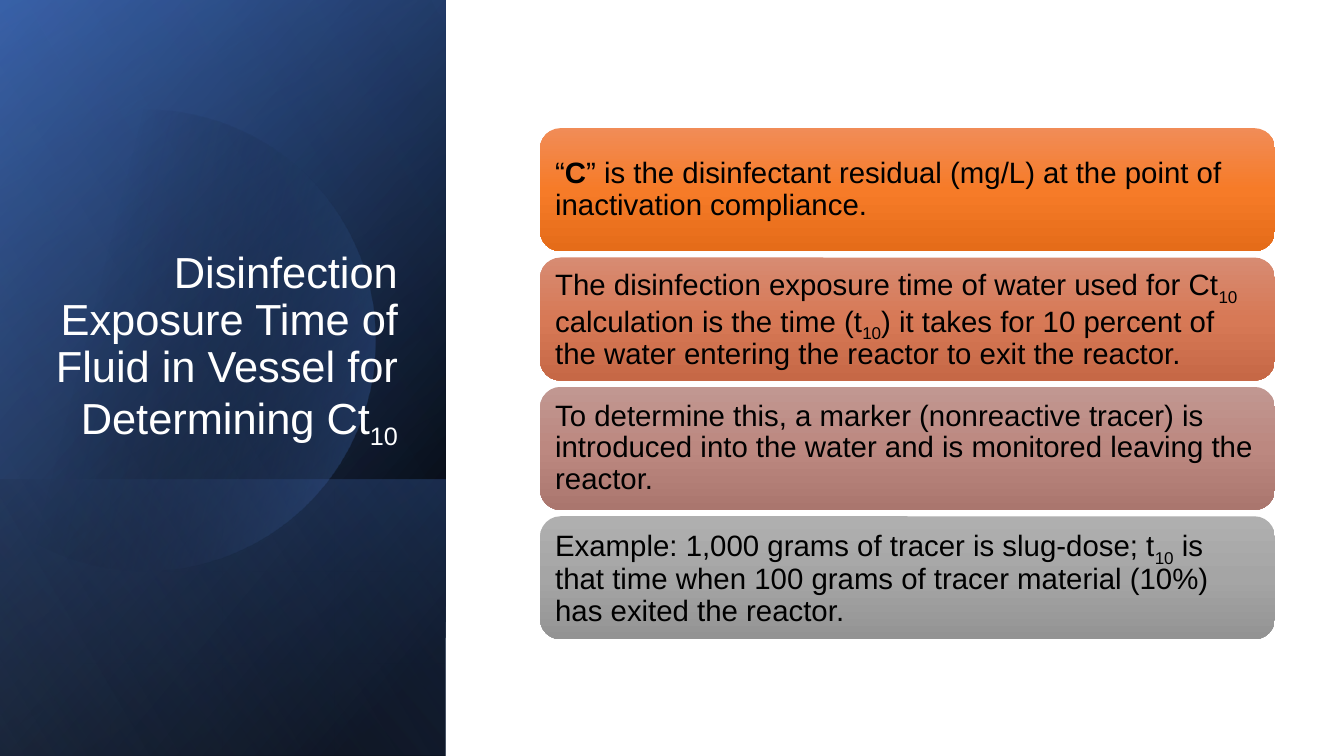
import math
from dataclasses import dataclass

import lxml.etree
import pptx
import pptx.dml.color
import pptx.enum.shapes
import pptx.enum.text
import pptx.oxml.ns
import pptx.util
from pptx.util import Cm

FONT = "Arial"
PANEL_WIDTH = 11.23
CARD_LEFT, CARD_TOP, CARD_WIDTH, CARD_HEIGHT, CARD_PITCH = 13.61, 3.23, 18.52, 3.1, 3.26


@dataclass
class Stop:
    position: int
    color: str
    opacity: int = 100


@dataclass
class Panel:
    top: float
    height: float
    angle: int
    stops: list[Stop]


@dataclass
class Piece:
    text: str
    bold: bool = False
    subscript: bool = False


@dataclass
class Card:
    colors: tuple[str, str, str]
    pieces: list[Piece]


TEN = Piece("10", subscript=True)
TITLE = [Piece("Disinfection Exposure Time of Fluid in Vessel for Determining Ct"), TEN]
BASE_PANELS = [
    Panel(0, 19.05, 50, [Stop(8, "000000"), Stop(100, "2F5597")]),
    Panel(0, 19.05, 30, [Stop(0, "000000", 0), Stop(99, "4472C4", 46)]),
    Panel(12.09, 6.96, 130, [Stop(2, "4472C4", 29), Stop(100, "000000", 30)]),
]
SHEEN_PANEL = Panel(0, 19.05, 120, [Stop(0, "000000", 0), Stop(99, "8FAADC", 11)])
CARDS = [
    Card(("F18C57", "F67B28", "E56C19"), [
        Piece("“"), Piece("C", bold=True),
        Piece("” is the disinfectant residual (mg/L) at the point of inactivation compliance."),
    ]),
    Card(("D78B72", "D77956", "C66846"), [
        Piece("The disinfection exposure time of water used for Ct"), TEN,
        Piece(" calculation is the time (t"), TEN,
        Piece(") it takes for 10 percent of the water entering the reactor to exit the reactor."),
    ]),
    Card(("C19791", "BC8880", "AA766E"), [
        Piece("To determine this, a marker (nonreactive tracer) is introduced into the water "
              "and is monitored leaving the reactor."),
    ]),
    Card(("AFAFAF", "A5A5A5", "939393"), [
        Piece("Example: 1,000 grams of tracer is slug-dose; t"), TEN,
        Piece(" is that time when 100 grams of tracer material (10%) has exited the reactor."),
    ]),
]


def rgb(color: str) -> pptx.dml.color.RGBColor:
    return pptx.dml.color.RGBColor.from_string(color)


def paint_gradient(shape, angle: float, stops: list[Stop]) -> None:
    """Fill without outline; the angle runs clockwise, in degrees."""
    qn = pptx.oxml.ns.qn
    shape.shadow.inherit = False
    shape.line.fill.background()
    shape.fill.gradient()
    shape.fill.gradient_angle = -angle % 360
    stop_list = shape.element.spPr.find(qn("a:gradFill")).find(qn("a:gsLst"))
    for old_stop in list(stop_list):
        stop_list.remove(old_stop)
    for stop in stops:
        node = lxml.etree.SubElement(stop_list, qn("a:gs"), pos=str(stop.position * 1000))
        color = lxml.etree.SubElement(node, qn("a:srgbClr"), val=stop.color)
        if stop.opacity < 100:
            lxml.etree.SubElement(color, qn("a:alpha"), val=str(stop.opacity * 1000))


def write_pieces(text_frame, pieces: list[Piece], size: float, color: str, alignment) -> None:
    text_frame.word_wrap = True
    paragraph = text_frame.paragraphs[0]
    paragraph.alignment = alignment
    paragraph.line_spacing = 0.9
    for piece in pieces:
        run = paragraph.add_run()
        run.text = piece.text
        run.font.name = FONT
        run.font.size = pptx.util.Pt(size)
        run.font.bold = piece.bold
        run.font.color.rgb = rgb(color)
        if piece.subscript:
            run.font._element.set("baseline", "-25000")


def add_panel(slide, panel: Panel) -> None:
    """Draw a mirrored rectangle turned by 90 degrees, so its gradient turns too."""
    shift = (PANEL_WIDTH - panel.height) / 2
    shape = slide.shapes.add_shape(
        pptx.enum.shapes.MSO_SHAPE.RECTANGLE,
        Cm(shift), Cm(panel.top - shift), Cm(panel.height), Cm(PANEL_WIDTH))
    shape.rotation = 90
    shape.element.spPr.xfrm.set("flipH", "1")
    paint_gradient(shape, panel.angle, panel.stops)


def add_cut_disc(slide) -> None:
    """Draw the disc that is cut off by the left slide edge."""
    center_x, center_y, radius, steps = 3.66, 8.57, 5.8, 120
    limit = math.acos(-center_x / radius)
    angles = [limit * (2 * step / steps - 1) for step in range(steps + 1)]
    points = [(Cm(center_x + radius * math.cos(angle)), Cm(center_y + radius * math.sin(angle)))
              for angle in angles]
    builder = slide.shapes.build_freeform(*points[0])
    builder.add_line_segments(points[1:], close=True)
    paint_gradient(builder.convert_to_shape(), 14, [Stop(29, "000000", 0), Stop(100, "4472C4", 43)])


def add_card(slide, card: Card, top: float) -> None:
    shape = slide.shapes.add_shape(
        pptx.enum.shapes.MSO_SHAPE.ROUNDED_RECTANGLE,
        Cm(CARD_LEFT), Cm(top), Cm(CARD_WIDTH), Cm(CARD_HEIGHT))
    paint_gradient(shape, 90, [Stop(50 * index, color) for index, color in enumerate(card.colors)])
    frame = shape.text_frame
    frame.margin_left = frame.margin_right = frame.margin_top = frame.margin_bottom = Cm(0.23)
    frame.vertical_anchor = pptx.enum.text.MSO_ANCHOR.MIDDLE
    write_pieces(frame, card.pieces, 21, "000000", pptx.enum.text.PP_ALIGN.LEFT)


def place_title(slide) -> None:
    title = slide.shapes.title
    title.left, title.top, title.width, title.height = Cm(0.3), Cm(4.09), Cm(9.98), Cm(7.26)
    title.text_frame.auto_size = pptx.enum.text.MSO_AUTO_SIZE.NONE
    title.text_frame.vertical_anchor = pptx.enum.text.MSO_ANCHOR.BOTTOM
    write_pieces(title.text_frame, TITLE, 31, "FFFFFF", pptx.enum.text.PP_ALIGN.RIGHT)
    # The title is created first; move it in front of the panels.
    slide.shapes.element.append(title.element)


def main() -> None:
    presentation = pptx.Presentation()
    presentation.slide_width, presentation.slide_height = Cm(33.87), Cm(19.05)
    slide = presentation.slides.add_slide(presentation.slide_layouts[5])
    for panel in BASE_PANELS:
        add_panel(slide, panel)
    add_cut_disc(slide)
    add_panel(slide, SHEEN_PANEL)
    place_title(slide)
    for index, card in enumerate(CARDS):
        add_card(slide, card, CARD_TOP + index * CARD_PITCH)
    presentation.save("out.pptx")


if __name__ == "__main__":
    main()
